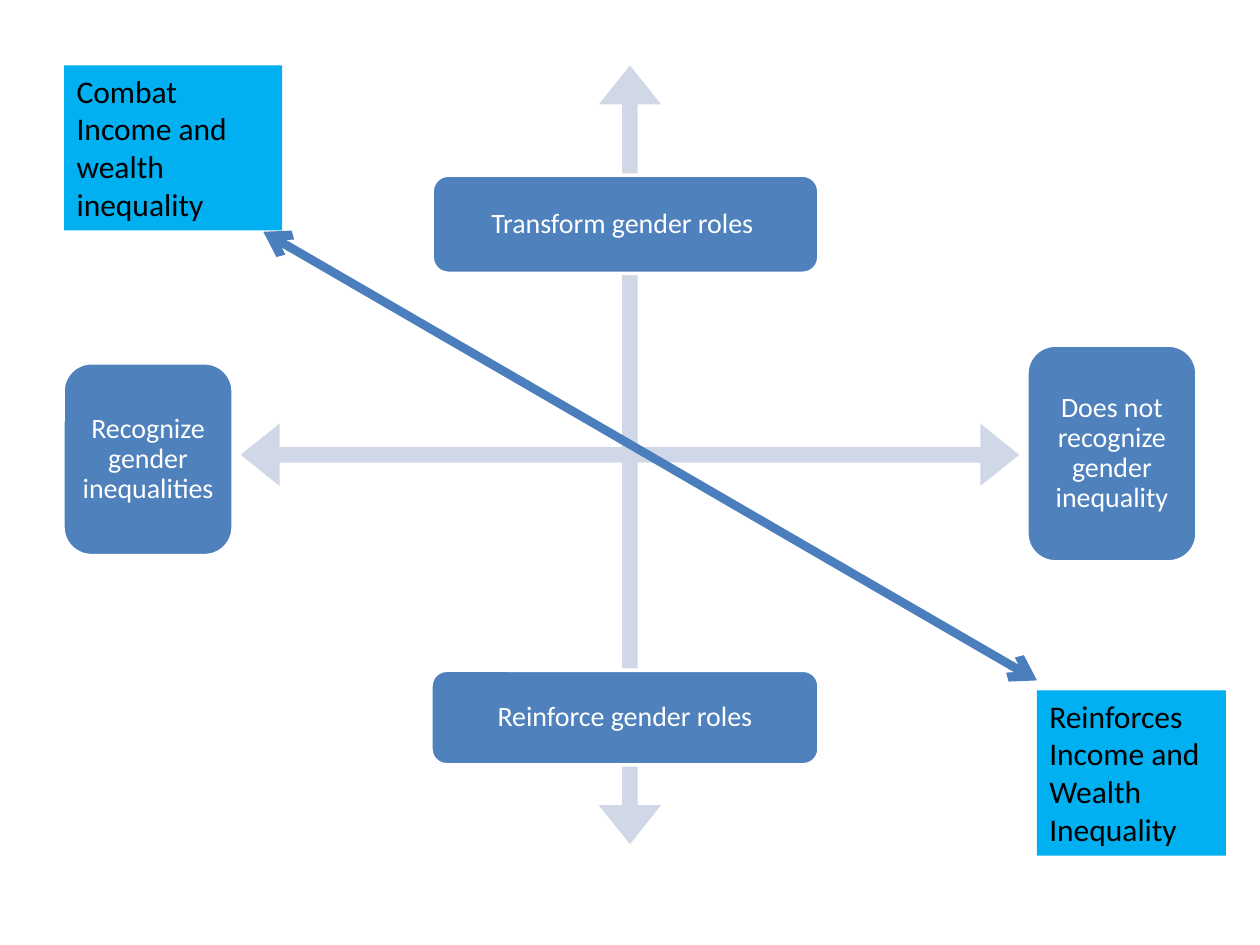
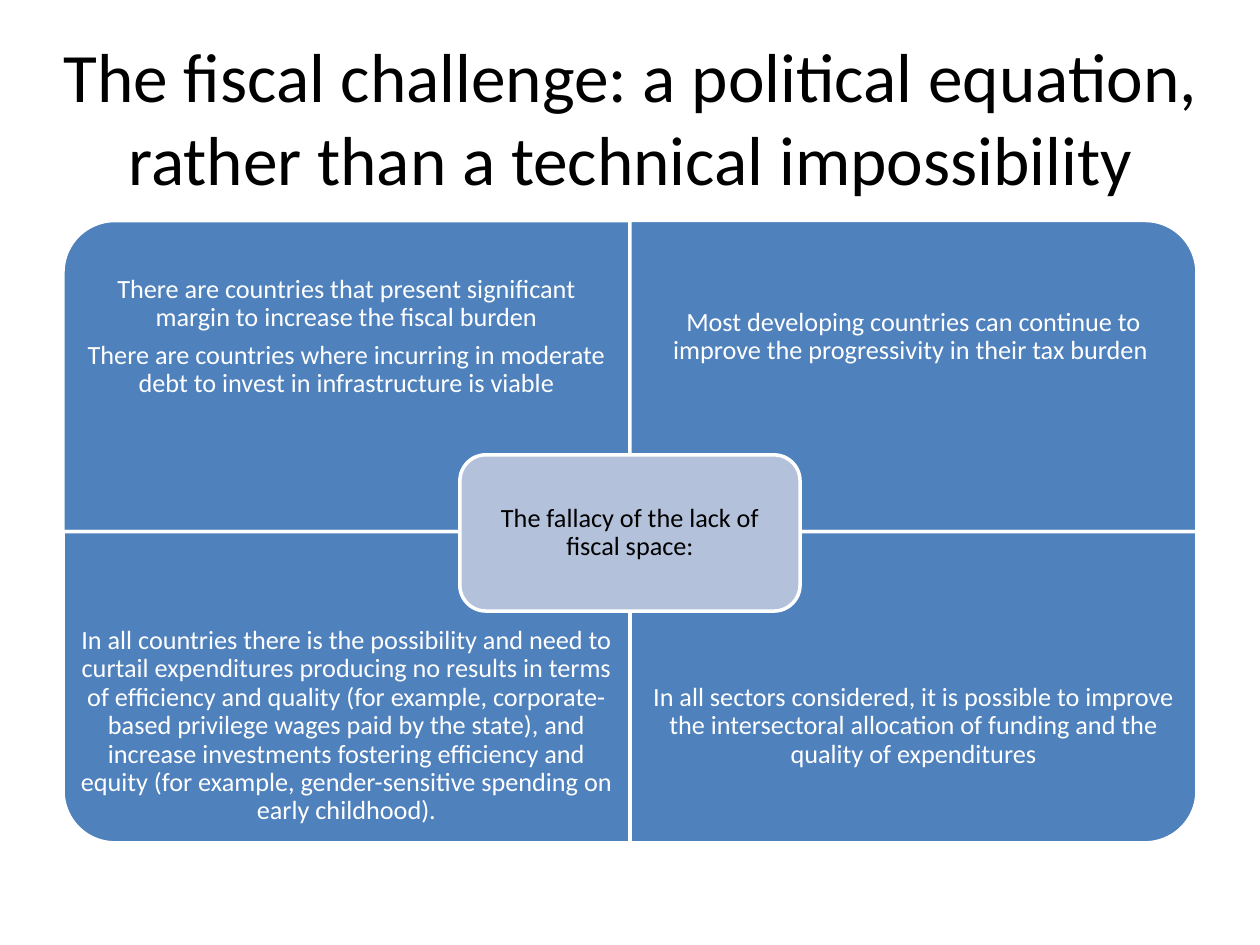
from dataclasses import dataclass

from lxml.etree import SubElement
from pptx import Presentation
from pptx.dml.color import RGBColor
from pptx.enum.shapes import MSO_CONNECTOR as Connector, MSO_SHAPE as Preset
from pptx.enum.text import MSO_ANCHOR as Anchor, MSO_AUTO_SIZE as AutoSize, PP_ALIGN as Align
from pptx.oxml.ns import qn
from pptx.util import Inches, Pt


@dataclass(frozen=True)
class Theme:
    font: str = "Calibri"
    black: RGBColor = RGBColor.from_string("000000")
    white: RGBColor = RGBColor.from_string("FFFFFF")
    blue: RGBColor = RGBColor.from_string("4F81BD")
    diagonal: RGBColor = RGBColor.from_string("4B7EBC")
    pale: RGBColor = RGBColor.from_string("D0D8E8")
    mist: RGBColor = RGBColor.from_string("B3C1DB")
    sky: RGBColor = RGBColor.from_string("00B0F0")
    title: float = 39.6
    outcome: int = 18
    pole: int = 16
    panel: int = 15
    border: int = 2
    arrow: int = 5


THEME = Theme()
WIDTH, HEIGHT = Inches(10), Inches(7.5)


def across(percent):
    return round(WIDTH * percent / 100)


def down(percent):
    return round(HEIGHT * percent / 100)


def area(left, top, width, height):
    """Turn percentages of the slide into lengths."""
    return across(left), down(top), across(width), down(height)


def style_text(paragraph, size, color, align):
    paragraph.alignment = align
    paragraph.font.name = THEME.font
    paragraph.font.size = Pt(size)
    paragraph.font.color.rgb = color


def add_block(slide, preset, place, fill, border=None):
    block = slide.shapes.add_shape(preset, *place)
    block.shadow.inherit = False
    block.fill.solid()
    block.fill.fore_color.rgb = fill
    if border is None:
        block.line.fill.background()
    else:
        block.line.color.rgb = border
        block.line.width = Pt(THEME.border)
    return block


def write_centred(frame, lines, size, color, inset):
    frame.word_wrap = True
    frame.vertical_anchor = Anchor.MIDDLE
    frame.margin_left = frame.margin_right = Inches(inset)
    frame.margin_top = frame.margin_bottom = Inches(inset)
    frame.text = "\n".join(lines)
    for paragraph in frame.paragraphs:
        style_text(paragraph, size, color, Align.CENTER)
        paragraph.line_spacing = 0.9
        paragraph.space_after = Pt(0.35 * size)


def add_rounded_label(slide, text, place, fill, size, color, inset):
    label = add_block(slide, Preset.ROUNDED_RECTANGLE, place, fill, THEME.white)
    write_centred(label.text_frame, [text], size, color, inset)


def add_outcome(slide, text, place):
    frame = add_block(slide, Preset.RECTANGLE, place, THEME.sky).text_frame
    frame.word_wrap = True
    frame.auto_size = AutoSize.SHAPE_TO_FIT_TEXT
    frame.vertical_anchor = Anchor.TOP
    frame.text = text
    style_text(frame.paragraphs[0], THEME.outcome, THEME.black, Align.LEFT)


def add_double_arrow(slide, start, end):
    arrow = slide.shapes.add_connector(
        Connector.STRAIGHT, across(start[0]), down(start[1]), across(end[0]), down(end[1]))
    arrow.line.color.rgb = THEME.diagonal
    arrow.line.width = Pt(THEME.arrow)
    properties = arrow.line.fill._xPr
    for tip in ("a:headEnd", "a:tailEnd"):
        SubElement(properties, qn(tip), type="arrow")
    SubElement(arrow._element.spPr, qn("a:effectLst"))


def add_axes(slide, center_x, center_y, side):
    """Draw the four-way arrow as a square around its centre."""
    length = across(side)
    axes = add_block(
        slide, Preset.QUAD_ARROW,
        (across(center_x) - length // 2, down(center_y) - length // 2, length, length),
        THEME.pale)
    for index, share in enumerate((0.02, 0.04, 0.05)):
        axes.adjustments[index] = share


def add_panel(slide, place, turn):
    """Draw a panel whose one round corner is turned outwards."""
    left, top, width, height = place
    if turn % 180:
        left += (width - height) // 2
        top -= (width - height) // 2
        width, height = height, width
    panel = add_block(slide, Preset.ROUND_1_RECTANGLE, (left, top, width, height),
                      THEME.blue, THEME.white)
    panel.rotation = turn


def build_gender_axes(deck):
    slide = deck.slides.add_slide(deck.slide_layouts[6])
    add_axes(slide, 50, 48.13, 61.8)

    # Poles of the two axes
    poles = (
        ("Reinforce gender roles", (34.2, 70.93, 30.8, 10)),
        ("Transform gender roles ", (34.3, 18.53, 30.7, 10.4)),
        ("Recognize gender inequalities", (5, 38.4, 13.5, 20.4)),
        ("Does not recognize gender inequality", (81.5, 36.53, 13.5, 22.93)),
    )
    for text, place in poles:
        add_rounded_label(slide, text, area(*place), THEME.blue, THEME.pole, THEME.white, 0.07)

    # Diagonal between the two outcomes
    add_double_arrow(slide, (20.9, 24.53), (82.3, 72))
    add_outcome(slide, "Combat Income and wealth inequality", area(5.1, 6.93, 17.3, 17.47))
    add_outcome(slide, "Reinforces Income and Wealth Inequality", area(82.3, 73.07, 15, 17.47))


def build_fiscal_challenge(deck):
    slide = deck.slides.add_slide(deck.slide_layouts[5])

    # Title
    title = slide.shapes.title
    title.left, title.top, title.width, title.height = area(2.8, 4, 94.5, 16.67)
    title.text_frame.text = ("The fiscal challenge: a political equation, "
                             "rather than a technical impossibility")
    title.text_frame.vertical_anchor = Anchor.MIDDLE
    style_text(title.text_frame.paragraphs[0], THEME.title, THEME.black, Align.CENTER)

    # Quadrants, row by row: turn of the round corner, then the arguments
    quadrants = (
        (270, ["There are countries that present significant margin to increase "
               "the fiscal burden",
               "There are countries where incurring in moderate debt to invest "
               "in infrastructure is viable"]),
        (0, ["Most developing countries can continue to improve the progressivity "
             "in their tax burden "]),
        (180, ["In all countries there is the possibility and need to curtail "
               "expenditures producing no results in terms of efficiency and quality "
               "(for example, corporate-based privilege wages paid by the state), and "
               "increase investments fostering efficiency and equity (for example, "
               "gender-sensitive spending on early childhood)."]),
        (90, ["In all sectors considered, it is possible to improve the intersectoral "
              "allocation of funding and the quality of expenditures"]),
    )
    left, top, width, height = 5, 23.33, 45, 32.93
    text_height = height * 0.75
    for index, (turn, arguments) in enumerate(quadrants):
        row, column = divmod(index, 2)
        x, y = left + column * width, top + row * height
        add_panel(slide, area(x, y, width, height), turn)
        text_top = y + row * (height - text_height)
        text_box = slide.shapes.add_textbox(*area(x, text_top, width, text_height))
        write_centred(text_box.text_frame, arguments, THEME.panel, THEME.white, 0.12)

    # Central claim
    add_rounded_label(slide, "The fallacy of the lack of fiscal space:",
                      area(36.5, 48.13, 27, 16.53), THEME.mist, THEME.panel, THEME.black, 0.06)


def main():
    deck = Presentation()
    deck.slide_width, deck.slide_height = WIDTH, HEIGHT
    build_gender_axes(deck)
    build_fiscal_challenge(deck)
    deck.save("out.pptx")


if __name__ == "__main__":
    main()
